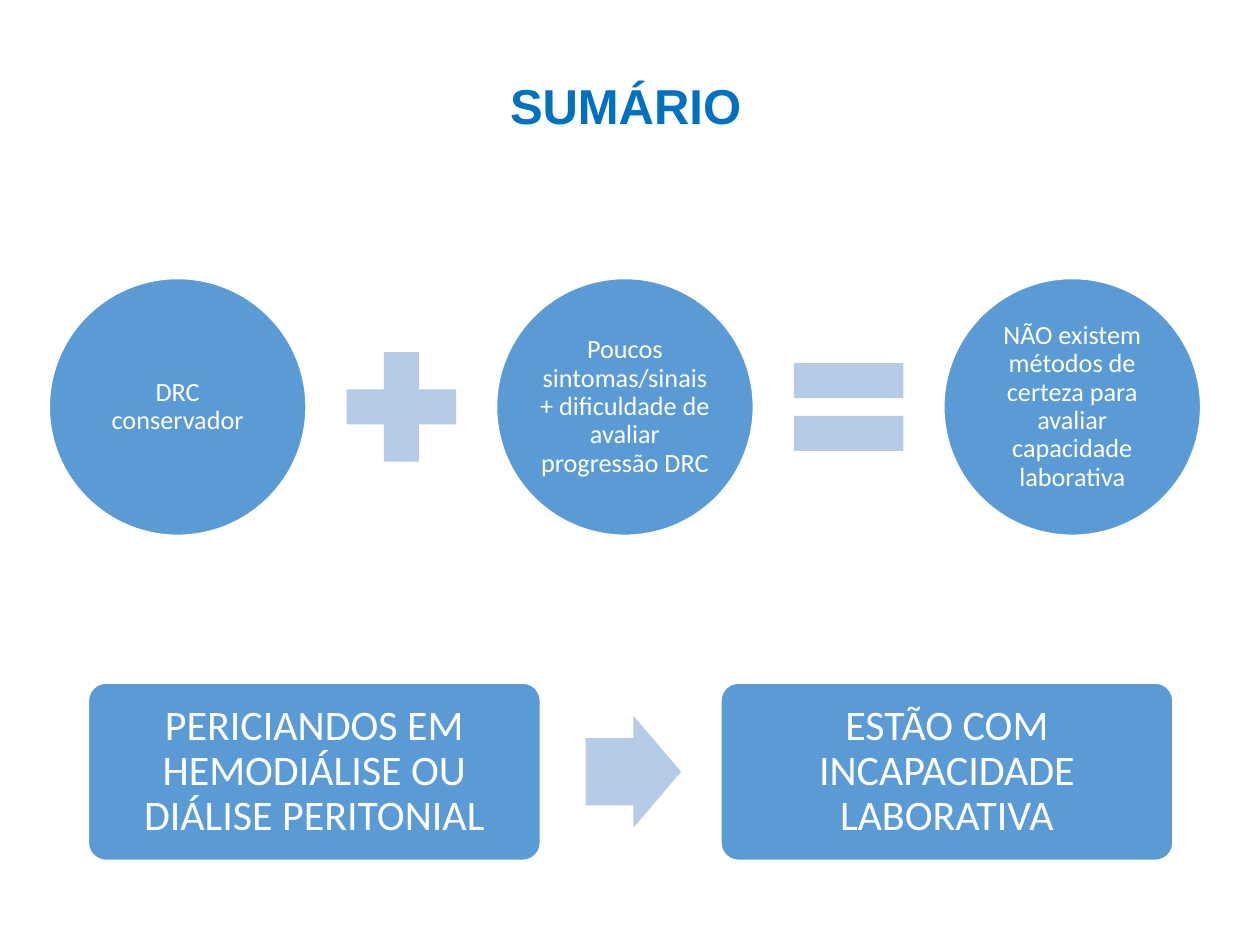
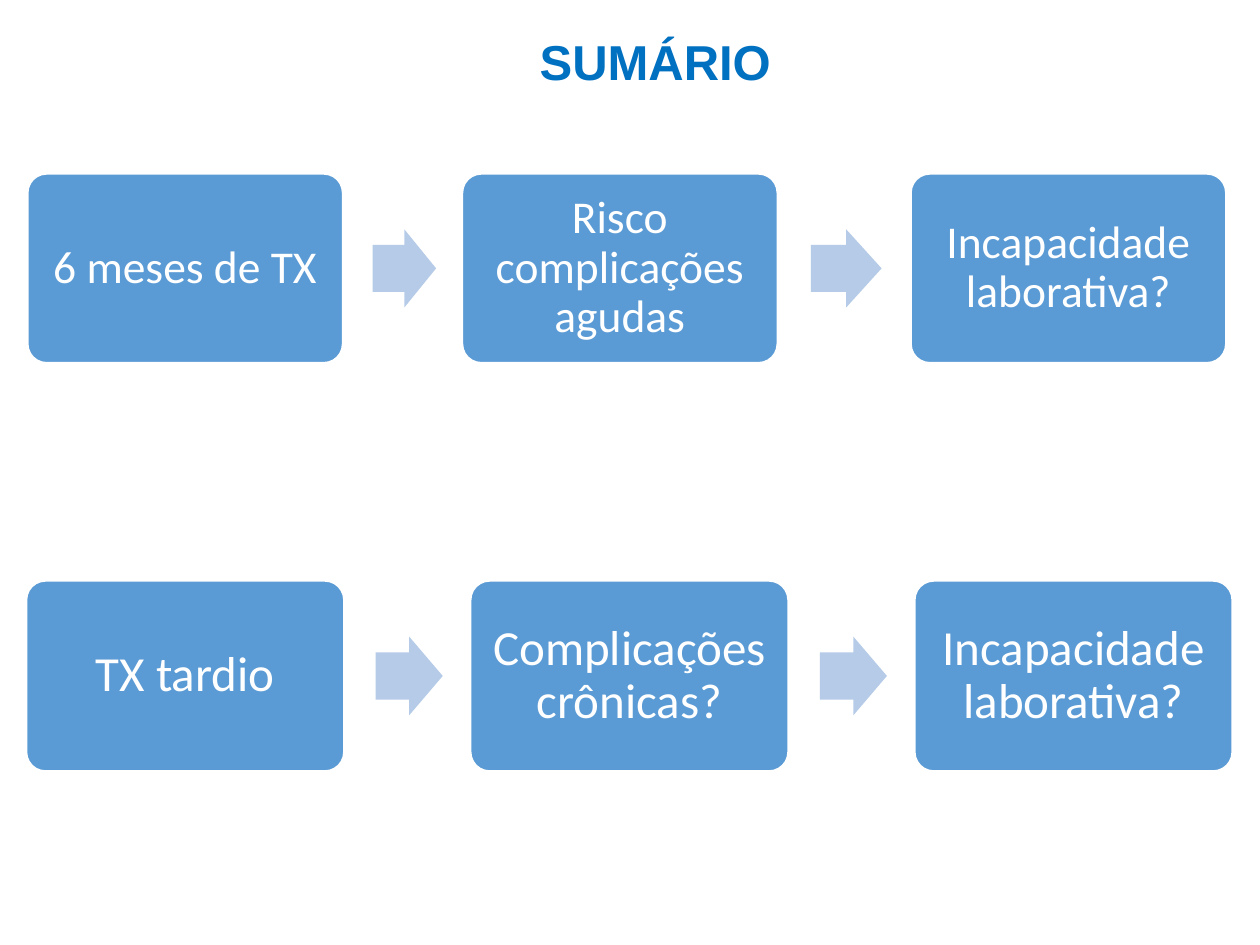
from dataclasses import dataclass
from itertools import pairwise

from pptx import Presentation
from pptx.dml.color import RGBColor as RGB
from pptx.enum.shapes import MSO_SHAPE as Shape
from pptx.enum.text import MSO_ANCHOR as Anchor, PP_ALIGN as Align
from pptx.util import Inches, Pt


@dataclass(frozen=True)
class Theme:
    title: RGB = RGB(0x00, 0x70, 0xC0)
    node: RGB = RGB(0x5B, 0x9B, 0xD5)
    sign: RGB = RGB(0xB5, 0xCB, 0xE7)
    white: RGB = RGB(0xFF, 0xFF, 0xFF)
    title_font: str = "Arial"
    body_font: str = "Calibri"
    title_size: int = 28
    circle_size: int = 15
    pair_size: int = 24
    early_size: int = 26
    late_size: int = 28


def write(sp, text, *, font, size, color, bold=False, inset=None):
    tf = sp.text_frame
    tf.word_wrap = True
    tf.vertical_anchor = Anchor.MIDDLE
    if inset is not None:
        tf.margin_left = tf.margin_right = Pt(inset)
        tf.margin_top = tf.margin_bottom = Pt(inset)
    p = tf.paragraphs[0]
    p.alignment = Align.CENTER
    p.line_spacing = 0.9
    r = p.add_run()
    r.text = text
    r.font.name = font
    r.font.size = Pt(size)
    r.font.bold = bold
    r.font.color.rgb = color


class Deck:
    COLS, ROWS = 100, 75

    def __init__(self, prs, theme):
        self.prs = prs
        self.theme = theme
        self.s = None

    def new_slide(self):
        self.s = self.prs.slides.add_slide(self.prs.slide_layouts[6])

    def box(self, x, y, w, h):
        col = self.prs.slide_width / self.COLS
        row = self.prs.slide_height / self.ROWS
        return [round(v) for v in (x * col, y * row, w * col, h * row)]

    def title(self, text, x, y, w, h=8.1):
        t = self.theme
        sp = self.s.shapes.add_textbox(*self.box(x, y, w, h))
        write(sp, text, font=t.title_font, size=t.title_size, color=t.title, bold=True)

    def shape(self, kind, x, y, w, h, fill, line=None):
        sp = self.s.shapes.add_shape(kind, *self.box(x, y, w, h))
        sp.shadow.inherit = False
        sp.fill.solid()
        sp.fill.fore_color.rgb = fill
        if line is None:
            sp.line.fill.background()
        else:
            sp.line.color.rgb = line
            sp.line.width = Pt(1)
        return sp

    def node(self, kind, text, x, y, w, h, size, inset):
        t = self.theme
        sp = self.shape(kind, x, y, w, h, t.node, t.white)
        write(sp, text, font=t.body_font, size=size, color=t.white, inset=inset)
        return sp

    def arrow(self, start, end, mid, h):
        gap = end - start
        sp = self.shape(Shape.RIGHT_ARROW, start + 0.25 * gap, mid - h / 2,
                        0.53 * gap, h, self.theme.sign)
        sp.adjustments[0] = 0.6
        sp.adjustments[1] = 0.5

    def flow(self, texts, lefts, y, w, h, size):
        for text, x in zip(texts, lefts):
            sp = self.node(Shape.ROUNDED_RECTANGLE, text, x, y, w, h, size, 0.3 * size)
            sp.adjustments[0] = 0.1
        for x, following in pairwise(lefts):
            self.arrow(x + w, following, y + h / 2, 0.248 * w)

    def equation(self, texts, signs, x, y, d, step):
        size = self.theme.circle_size
        for i, text in enumerate(texts):
            self.node(Shape.OVAL, text, x + i * step, y, d, d, size, 0.1 * size)
        side = 0.58 * d
        for i, sign in enumerate(signs):
            self.shape(sign, x + i * step + (step + d - side) / 2,
                       y + (d - side) / 2, side, side, self.theme.sign)


def dialysis_slide(deck):
    deck.new_slide()
    deck.flow(["PERICIANDOS EM HEMODIÁLISE OU DIÁLISE PERITONIAL",
               "ESTÃO COM INCAPACIDADE LABORATIVA"],
              [7, 57.2], 54.2, 35.9, 14.1, deck.theme.pair_size)
    deck.title("SUMÁRIO", 30.5, 4.6, 38.3)
    deck.equation(["DRC conservador",
                   "Poucos sintomas/sinais + dificuldade de avaliar progressão DRC",
                   "NÃO existem métodos de certeza para avaliar capacidade laborativa"],
                  [Shape.MATH_PLUS, Shape.MATH_EQUAL], 3.9, 22.1, 20.4, 35.5)


def transplant_slide(deck):
    deck.new_slide()
    deck.flow(["6 meses de TX", "Risco complicações agudas", "Incapacidade laborativa?"],
              [2.2, 36.7, 72.3], 13.8, 25, 15, deck.theme.early_size)
    deck.title("SUMÁRIO", 30.9, 1.1, 42.2)
    deck.flow(["TX tardio", "Complicações crônicas?", "Incapacidade laborativa?"],
              [2.1 + 35.25 * i for i in range(3)], 46.1, 25.2, 15.1, deck.theme.late_size)


def main():
    prs = Presentation()
    prs.slide_width = Inches(10)
    prs.slide_height = Inches(7.5)
    deck = Deck(prs, Theme())
    dialysis_slide(deck)
    transplant_slide(deck)
    prs.save("out.pptx")


if __name__ == "__main__":
    main()
